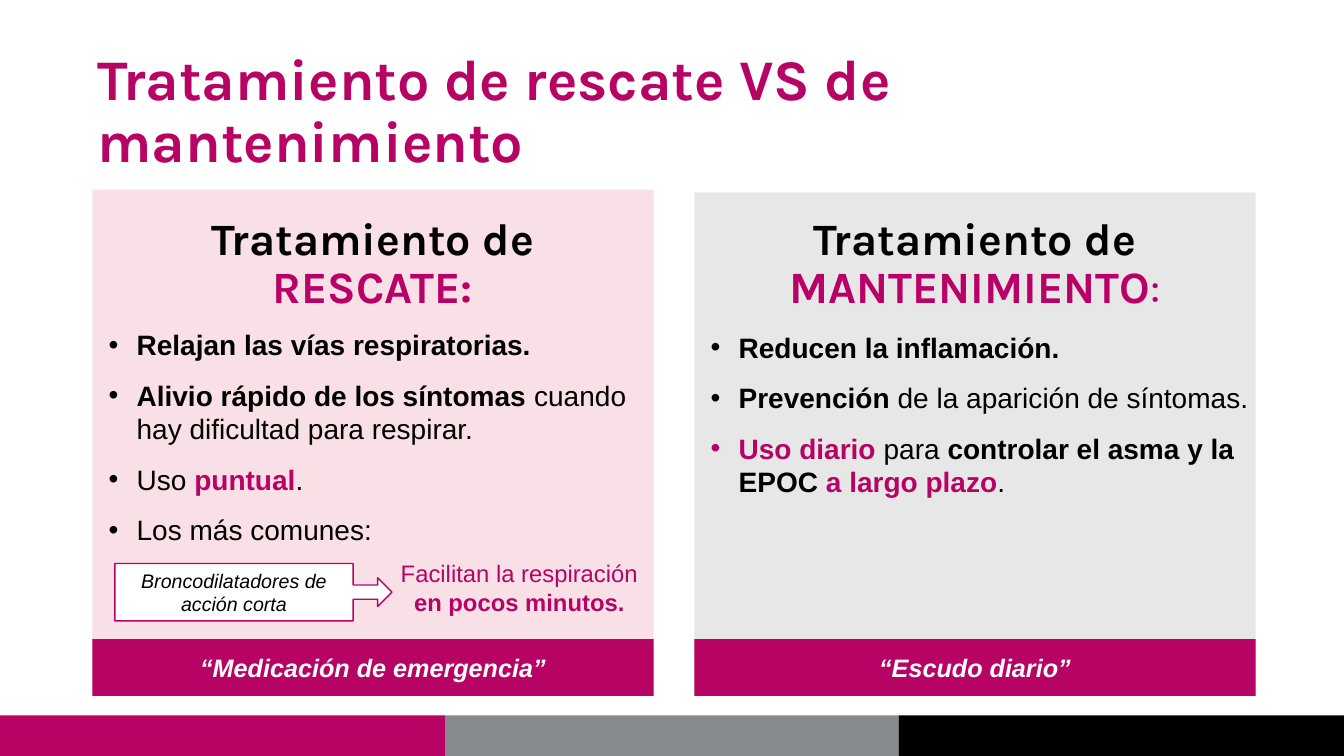
from lxml import etree
from pptx import Presentation
from pptx.dml.color import RGBColor
from pptx.enum.shapes import MSO_SHAPE as Shape
from pptx.enum.text import MSO_ANCHOR as Anchor, MSO_AUTO_SIZE as AutoSize, PP_ALIGN as Align
from pptx.oxml.ns import qn
from pptx.util import Pt

MAGENTA = RGBColor(0xB7, 0x03, 0x64)
HEADING_MAGENTA = RGBColor(0xB9, 0x00, 0x66)
PINK = RGBColor(0xF9, 0xE0, 0xE7)
GREY = RGBColor(0x88, 0x8B, 0x8D)
BLACK = RGBColor(0, 0, 0)
WHITE = RGBColor(255, 255, 255)

BOLD = {"bold": True}
PINK_BOLD = {"bold": True, "color": MAGENTA}
INSET = 3.6
LEFT_X, RIGHT_X, PANEL_W = 66, 496, 401
PANEL_BOTTOM = 497
FOOTER_H = 40.5


class Slide:
    def __init__(self, prs):
        self.s = prs.slides.add_slide(prs.slide_layouts[3])
        self.title_ph, *self.bodies = self.s.placeholders

    def set_text(self, shape, paragraphs, size, font="Arial", align=Align.CENTER,
                 anchor=Anchor.TOP, line=1.0, gap=0, bullets=False):
        """Fill a shape; each paragraph is a list of (text, format) runs."""
        tf = shape.text_frame
        frame = {"word_wrap": True, "auto_size": AutoSize.NONE, "vertical_anchor": anchor}
        frame |= {f"margin_{side}": Pt(INSET) for side in ("left", "right", "top", "bottom")}
        for name, value in frame.items():
            setattr(tf, name, value)
        for i, runs in enumerate(paragraphs):
            p = tf.add_paragraph() if i else tf.paragraphs[0]
            if bullets:
                self.bullet(p, runs[0][1].get("color", BLACK))
            p.alignment, p.line_spacing = align, line
            p.space_before = Pt(gap if i else 0)
            for text, style in runs:
                r = p.add_run()
                r.text = text
                values = {"name": font, "size": Pt(size), "bold": False} | style
                r.font.color.rgb = values.pop("color", BLACK)
                for name, value in values.items():
                    setattr(r.font, name, value)

    def bullet(self, p, color):
        pPr = p._p.get_or_add_pPr()
        pPr.set("marL", str(Pt(28)))
        pPr.set("indent", str(-Pt(20)))
        clr = etree.SubElement(pPr, qn("a:buClr"))
        etree.SubElement(clr, qn("a:srgbClr"), val=str(color))
        etree.SubElement(pPr, qn("a:buFont"), typeface="Arial")
        etree.SubElement(pPr, qn("a:buChar"), char="•")

    def place(self, ph, x, y, w, h):
        """Move a placeholder and bring it to the front."""
        ph.left, ph.top, ph.width, ph.height = map(Pt, (x, y, w, h))
        self.s.shapes._spTree.append(ph._element)

    def title(self, text, box):
        self.place(self.title_ph, *box)
        self.set_text(self.title_ph, [[(text, PINK_BOLD)]], 41, "Karla",
                      Align.LEFT, Anchor.MIDDLE, 0.9)

    def bullet_list(self, body, box, paragraphs):
        self.place(body, *box)
        self.set_text(body, paragraphs, 20, align=Align.LEFT, gap=12, bullets=True)

    def shape(self, box, fill, kind=Shape.RECTANGLE, line=None, opacity=None):
        sp = self.s.shapes.add_shape(kind, *map(Pt, box))
        sp.shadow.inherit = False
        sp.fill.solid()
        sp.fill.fore_color.rgb = fill
        if opacity:
            clr = sp._element.spPr.find(qn("a:solidFill"))[0]
            etree.SubElement(clr, qn("a:alpha"), val=str(opacity * 1000))
        if line:
            sp.line.color.rgb, sp.line.width = line, Pt(1)
        else:
            sp.line.fill.background()
        return sp

    def text(self, box, runs, size, **style):
        self.set_text(self.s.shapes.add_textbox(*map(Pt, box)), [runs], size, **style)

    def panel(self, x, top, fill, opacity, heading, body, list_h, items, footer):
        self.shape((x, top, PANEL_W, PANEL_BOTTOM - top), fill, opacity=opacity)
        self.text((x + 25, 151, PANEL_W - 50, 65), heading, 32, font="Karla", line=0.9)
        self.bullet_list(body, (x, top + 95, PANEL_W, list_h), items)
        band = self.shape((x, PANEL_BOTTOM - FOOTER_H, PANEL_W, FOOTER_H), MAGENTA)
        self.set_text(band, [[(footer, {"bold": True, "italic": True, "color": WHITE})]],
                      18, anchor=Anchor.MIDDLE)


def main():
    prs = Presentation()
    prs.slide_width, prs.slide_height = Pt(960), Pt(540)
    slide = Slide(prs)
    for x, w, color in ((0, 318, MAGENTA), (318, 324, GREY), (642, 318, BLACK)):
        slide.shape((x, 511, w, 29), color)
    slide.title("Tratamiento de rescate VS de mantenimiento", (LEFT_X, 29, 828, 104))

    heading_pink = {"bold": True, "color": HEADING_MAGENTA}
    rescue, upkeep = slide.bodies
    slide.panel(
        LEFT_X, 135.5, PINK, None,
        [("Tratamiento de ", BOLD), ("RESCATE:", heading_pink)],
        rescue, 160,
        [[("Relajan las vías respiratorias.", BOLD)],
         [("Alivio rápido de los síntomas ", BOLD), ("cuando hay dificultad para respirar.", {})],
         [("Uso ", {}), ("puntual", PINK_BOLD), (".", {})],
         [("Los más comunes:", {})]],
        "“Medicación de emergencia”")
    slide.panel(
        RIGHT_X, 137.5, GREY, 20,
        [("Tratamiento de ", BOLD), ("MANTENIMIENTO", heading_pink),
         (":", {"color": HEADING_MAGENTA})],
        upkeep, 135,
        [[("Reducen la inflamación.", BOLD)],
         [("Prevención", BOLD), (" de la aparición de síntomas.", {})],
         [("Uso diario ", PINK_BOLD), ("para ", {}), ("controlar el asma y la EPOC ", BOLD),
          ("a largo plazo", PINK_BOLD), (".", {})]],
        "“Escudo diario”")

    callout = slide.shape((82, 402.5, 198, 41), WHITE, Shape.RIGHT_ARROW_CALLOUT, MAGENTA)
    for i, value in enumerate((0.25, 0.25, 0.25, 0.86)):
        callout.adjustments[i] = value
    slide.set_text(callout, [[("Broncodilatadores de acción corta", {"italic": True})]], 14)
    slide.text((275, 395.5, 192, 48), [("Facilitan la respiración ", {"color": MAGENTA}),
                                       ("en pocos minutos.", PINK_BOLD)], 17)
    prs.save("out.pptx")


if __name__ == "__main__":
    main()
